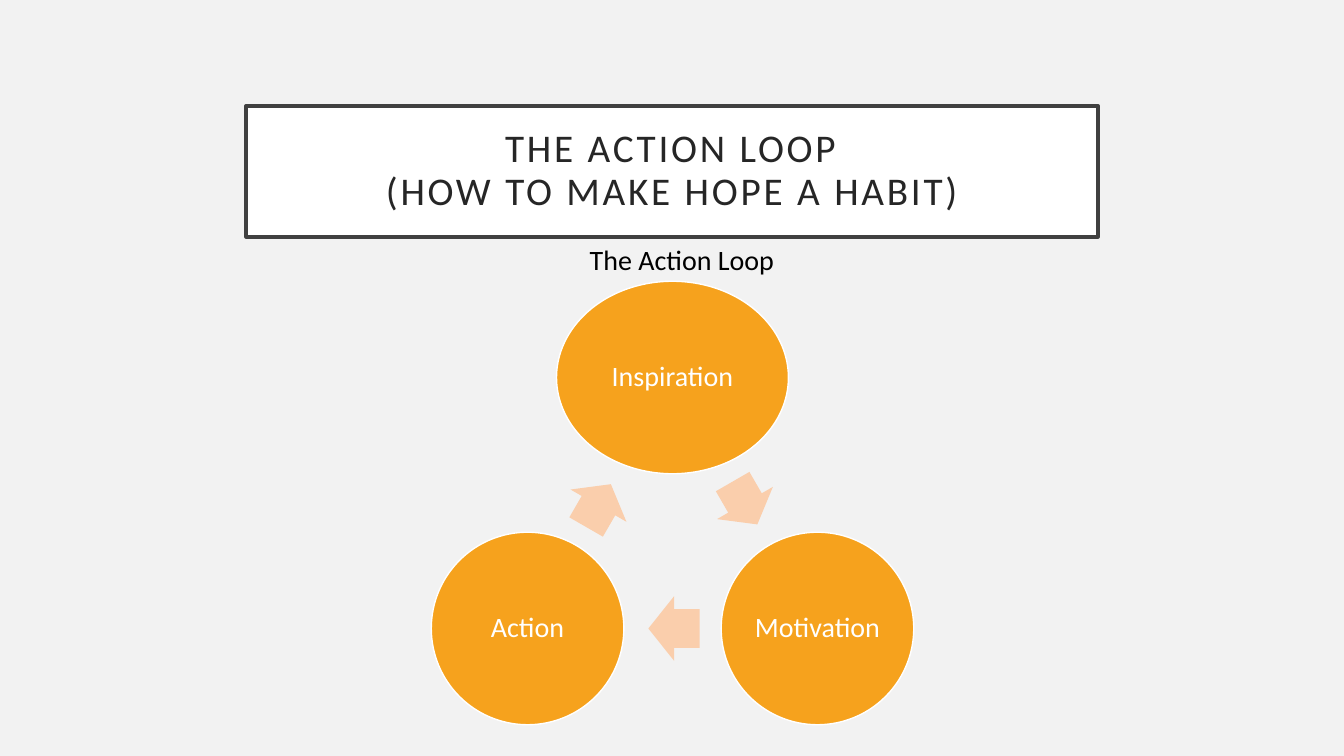
import math

import pptx
import pptx.dml.color
import pptx.enum.shapes
import pptx.enum.text
import pptx.util

RGBColor = pptx.dml.color.RGBColor
Inches = pptx.util.Inches
Pt = pptx.util.Pt
SHAPE = pptx.enum.shapes.MSO_SHAPE
ALIGN = pptx.enum.text.PP_ALIGN
MIDDLE = pptx.enum.text.MSO_ANCHOR.MIDDLE

PAPER = RGBColor(0xF2, 0xF2, 0xF2)
WHITE = RGBColor(0xFF, 0xFF, 0xFF)
BLACK = RGBColor(0x00, 0x00, 0x00)
FRAME = RGBColor(0x40, 0x40, 0x40)
INK = RGBColor(0x26, 0x26, 0x26)
ORANGE = RGBColor(0xF6, 0xA2, 0x1D)
PEACH = RGBColor(0xFA, 0xCE, 0xAC)

WIDTH, HEIGHT = 13.33, 7.5
TITLE_BOX = (2.44, 1.05, 8.45, 1.3)
CAPTION_BOX = (5.75, 2.35, 2.12, 0.44)
LOOP_BOX = (4.28, 2.79, 4.78, 4.4)

STAGES = [("Inspiration", 2.3), ("Motivation", 1.91), ("Action", 1.91)]
STAGE_HEIGHT = 1.91
ARROWS = [(0.49, 0), (0.51, -0.015), (0.49, -0.03)]
ARROW_HEIGHT = 0.64


def add_block(page, kind, box, fill, line=None, weight=0):
    block = page.shapes.add_shape(kind, *map(Inches, box))
    block.shadow.inherit = False
    block.fill.solid()
    block.fill.fore_color.rgb = fill
    if line is None:
        block.line.fill.background()
    else:
        block.line.color.rgb = line
        block.line.width = Pt(weight)
    return block


def write(shape, lines, size, color, inset, align=ALIGN.CENTER, wrap=True,
          line_spacing=0.9, tracking=0):
    frame = shape.text_frame
    settings = {"word_wrap": wrap, "vertical_anchor": MIDDLE}
    for side in ("left", "right", "top", "bottom"):
        settings["margin_" + side] = Inches(inset)
    for name, value in settings.items():
        setattr(frame, name, value)
    para = frame.paragraphs[0]
    para.alignment = align
    para.line_spacing = line_spacing
    for number, line in enumerate(lines):
        if number:
            para.add_line_break()
        span = para.add_run()
        span.text = line
        for name, value in {"name": "Calibri", "size": Pt(size)}.items():
            setattr(span.font, name, value)
        span.font.color.rgb = color
        if tracking:
            span.font._element.set("spc", str(tracking * 100))


def draw_title(page, box):
    title = add_block(page, SHAPE.RECTANGLE, box, WHITE, FRAME, 2.5)
    write(title, ["THE ACTION LOOP", "(HOW TO MAKE HOPE A HABIT)"],
          28, INK, 0.2, tracking=2)


def draw_caption(page, box):
    caption = page.shapes.add_textbox(*map(Inches, box))
    write(caption, ["The Action Loop"], 20, BLACK, 0.1,
          align=ALIGN.LEFT, wrap=False, line_spacing=1)


def draw_loop(page, box):
    left, top, width, height = box
    radius = (height - STAGE_HEIGHT) / 1.5
    center_x = left + width / 2
    center_y = top + STAGE_HEIGHT / 2 + radius
    step = 360 / len(STAGES)

    def around(degrees, distance):
        angle = math.radians(degrees)
        return (center_x + distance * math.sin(angle),
                center_y - distance * math.cos(angle))

    for number, (name, stage_width) in enumerate(STAGES):
        x, y = around(number * step, radius)
        stage = add_block(page, SHAPE.OVAL,
                          (x - stage_width / 2, y - STAGE_HEIGHT / 2,
                           stage_width, STAGE_HEIGHT), ORANGE, WHITE, 1)
        write(stage, [name], 20, WHITE, 0.03)

    for number, (length, shift) in enumerate(ARROWS):
        turn = (number + 0.5) * step
        x, y = around(turn, radius / 2)
        x += shift * math.cos(math.radians(turn))
        y += shift * math.sin(math.radians(turn))
        arrow = add_block(page, SHAPE.RIGHT_ARROW,
                          (x - length / 2, y - ARROW_HEIGHT / 2,
                           length, ARROW_HEIGHT), PEACH)
        arrow.adjustments[0] = 0.6
        arrow.adjustments[1] = 0.5
        arrow.rotation = turn


def main():
    deck = pptx.Presentation()
    deck.slide_width = Inches(WIDTH)
    deck.slide_height = Inches(HEIGHT)
    page = deck.slides.add_slide(deck.slide_layouts[6])
    page.background.fill.solid()
    page.background.fill.fore_color.rgb = PAPER
    draw_title(page, TITLE_BOX)
    draw_loop(page, LOOP_BOX)
    draw_caption(page, CAPTION_BOX)
    deck.save("out.pptx")


if __name__ == "__main__":
    main()
